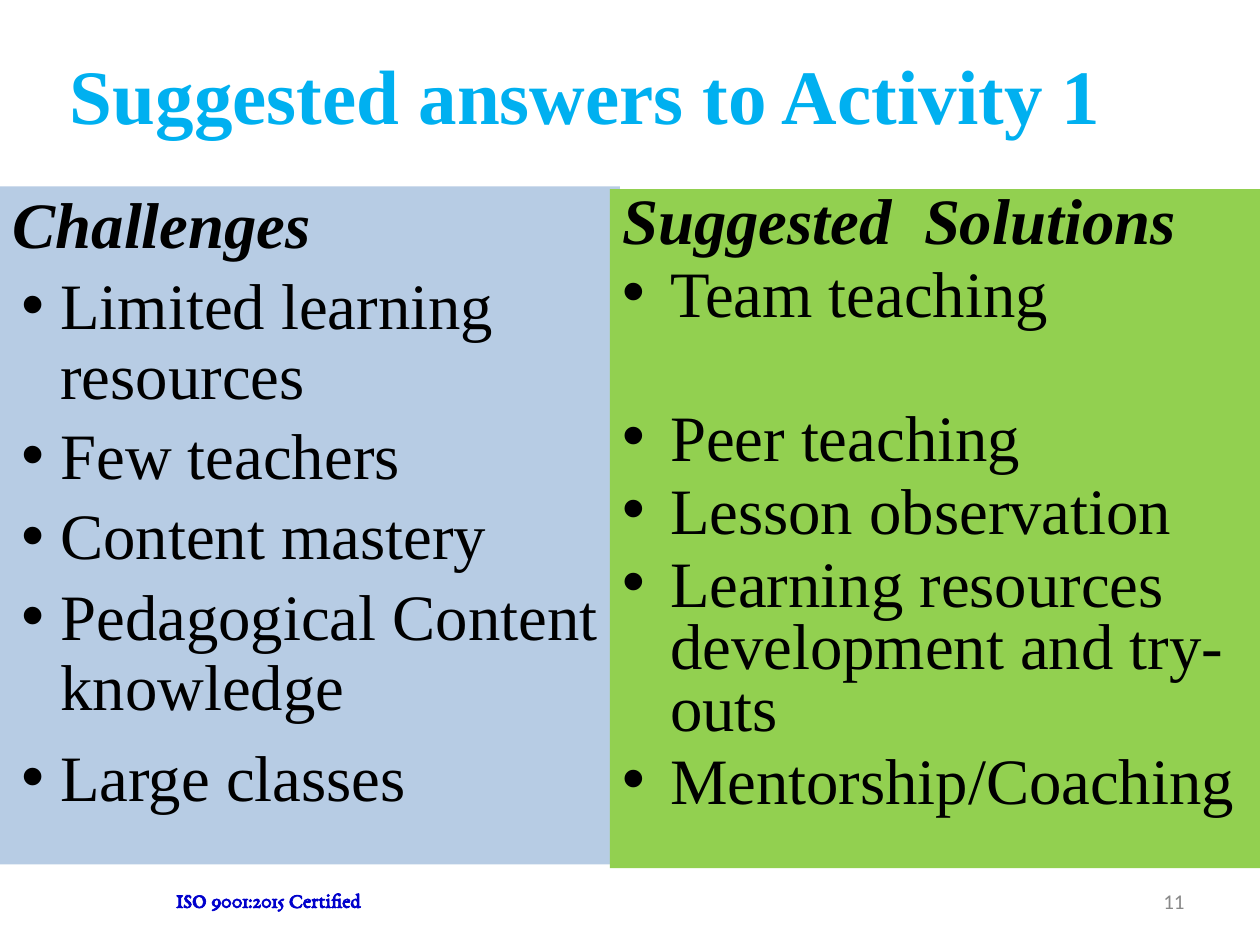
from dataclasses import dataclass

from lxml.etree import SubElement as Sub
from pptx import Presentation
from pptx.dml.color import RGBColor as Rgb
from pptx.enum.text import MSO_ANCHOR as Anchor, MSO_AUTO_SIZE as Fit, PP_ALIGN as Align
from pptx.oxml.ns import qn
from pptx.util import Inches, Pt


@dataclass(frozen=True)
class Theme:
    serif: str = "Times New Roman"
    sans: str = "Calibri"
    old: str = "EB Garamond"
    black: str = "000000"
    title: str = "00B0F0"
    left: str = "B7CCE4"
    right: str = "92D050"
    note: str = "0000CC"
    grey: str = "898989"
    big: int = 44
    body: int = 37
    small: int = 12


THEME = Theme()


def place(shape, box):
    """Put a shape in its box (left, top, width, height in inches)."""
    shape.left, shape.top, shape.width, shape.height = map(Inches, box)
    return shape


def prep(shape, anchor=Anchor.TOP):
    """Wrap the text, keep its size and return the frame."""
    frame = shape.text_frame
    frame.word_wrap = True
    frame.auto_size = Fit.NONE
    frame.vertical_anchor = anchor
    return frame


def mark(para, indent, hang):
    """Give a paragraph a round bullet, or none when there is no hang."""
    props = para._p.get_or_add_pPr()
    props.set("marL", str(Inches(indent)))
    props.set("indent", str(-Inches(hang)))
    if not hang:
        Sub(props, qn("a:buNone"))
        return
    Sub(Sub(props, qn("a:buClr")), qn("a:srgbClr"), val=THEME.black)
    Sub(props, qn("a:buFont"), typeface="Arial")
    Sub(props, qn("a:buChar"), char="•")


def write(para, text, font=THEME.serif, size=THEME.body, color=THEME.black,
          bold=False, italic=False, align=Align.LEFT, line=1.0, before=0):
    """Write one formatted paragraph."""
    para.alignment = align
    para.line_spacing = line
    para.space_before = Pt(before)
    run = para.add_run()
    run.text = text
    face = run.font
    face.name, face.size = font, Pt(size)
    face.bold, face.italic = bold, italic
    face.color.rgb = Rgb.from_string(color)


def head(slide, box, text):
    """Slide title."""
    frame = prep(place(slide.shapes.title, box), Anchor.MIDDLE)
    write(frame.paragraphs[0], text, size=THEME.big, color=THEME.title,
          bold=True, align=Align.CENTER)


def panel(shape, box, fill, title, items, hang, line):
    """Filled column: a heading and bulleted (text, space before) items."""
    place(shape, box)
    shape.fill.solid()
    shape.fill.fore_color.rgb = Rgb.from_string(fill)
    frame = prep(shape)
    para = frame.paragraphs[0]
    mark(para, 0, 0)
    write(para, title, bold=True, italic=True, line=line)
    for text, before in items:
        para = frame.add_paragraph()
        mark(para, 0.38, hang)
        write(para, text, line=line, before=before)


def label(slide, box, text, anchor=Anchor.TOP, **style):
    """Small footer text."""
    frame = prep(slide.shapes.add_textbox(*map(Inches, box)), anchor)
    write(frame.paragraphs[0], text, size=THEME.small, **style)


def main():
    deck = Presentation()
    deck.slide_width, deck.slide_height = Inches(10), Inches(7.5)
    slide = deck.slides.add_slide(deck.slide_layouts[1])

    # Title
    head(slide, (0.15, 0.12, 9, 1.25), "Suggested answers to Activity 1")

    # Columns
    panel(slide.placeholders[1], (0, 1.48, 4.92, 5.38), THEME.left, "Challenges",
          [("Limited learning resources", 6), ("Few teachers", 6),
           ("Content mastery", 6), ("Pedagogical Content knowledge", 6),
           ("Large classes", 12)], hang=0.31, line=0.9)
    area = (4.84, 1.5, 5.16, 5.39)
    panel(slide.shapes.add_textbox(*map(Inches, area)), area, THEME.right,
          "Suggested  Solutions",
          [("Team teaching", 6), ("Peer teaching", 47), ("Lesson observation", 6),
           ("Learning resources development and try-outs", 6),
           ("Mentorship/Coaching", 6)], hang=0.38, line=0.8)

    # Footer
    label(slide, (1.3, 6.99, 5.19, 0.3), "ISO 9001:2015 Certified",
          font=THEME.old, color=THEME.note, bold=True)
    label(slide, (7.17, 6.95, 2.33, 0.4), "11", Anchor.MIDDLE,
          font=THEME.sans, color=THEME.grey, align=Align.RIGHT)

    deck.save("out.pptx")


if __name__ == "__main__":
    main()
